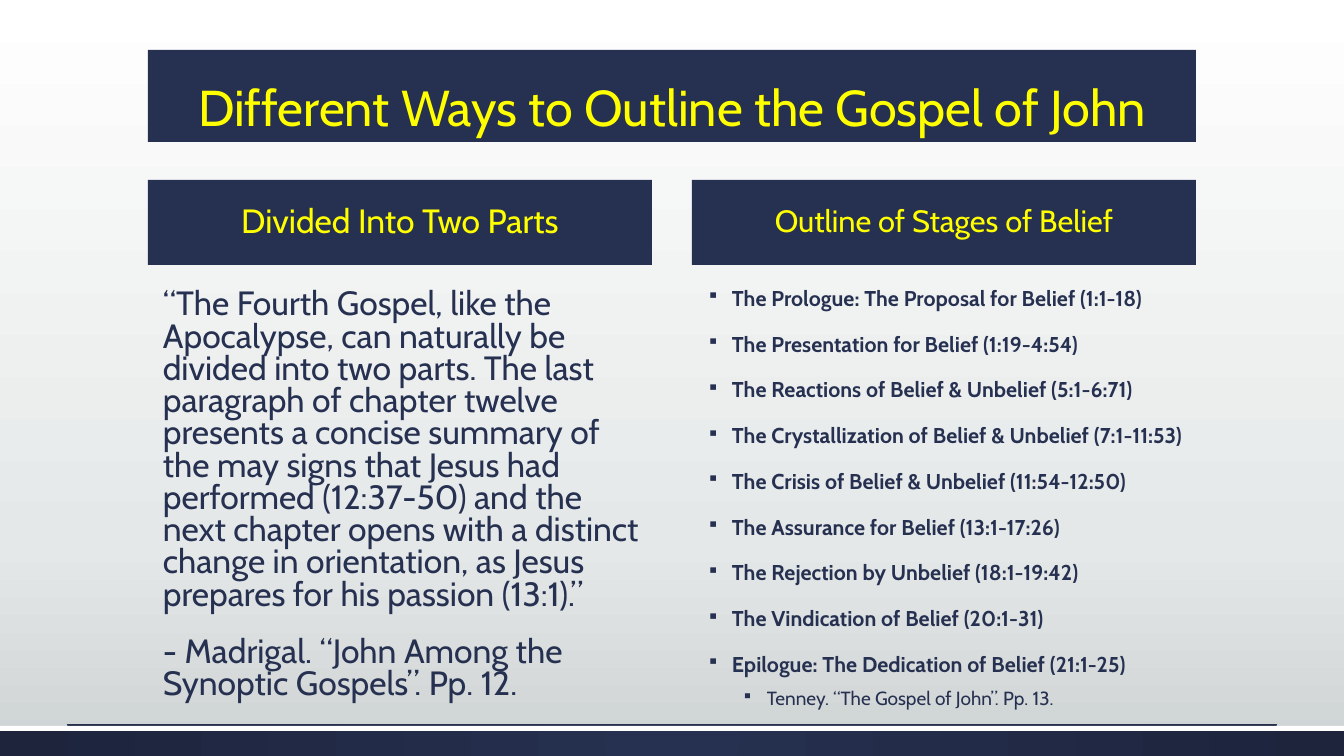
from lxml import etree
from pptx import Presentation
from pptx import util as u
from pptx.dml.color import RGBColor
from pptx.enum import shapes, text
from pptx.oxml.ns import qn

PX = 12192000 / 1344
COLORS = {"navy": "263050", "deep": "1D243C", "yellow": "FFFF00",
          "white": "FFFFFF", "pale": "E5E8E8", "gray": "CDD2D2"}
QUOTE = [
    "“The Fourth Gospel, like the Apocalypse, can naturally be divided into "
    "two parts. The last paragraph of chapter twelve presents a concise "
    "summary of the may signs that Jesus had performed (12:37-50) and the "
    "next chapter opens with a distinct change in orientation, as Jesus "
    "prepares for his passion (13:1).”",
    "- Madrigal. “John Among the Synoptic Gospels”. Pp. 12.",
]
STAGES = [
    "The Prologue: The Proposal for Belief (1:1-18)",
    "The Presentation for Belief (1:19-4:54)",
    "The Reactions of Belief & Unbelief (5:1-6:71)",
    "The Crystallization of Belief & Unbelief (7:1-11:53)",
    "The Crisis of Belief & Unbelief (11:54-12:50)",
    "The Assurance for Belief (13:1-17:26)",
    "The Rejection by Unbelief (18:1-19:42)",
    "The Vindication of Belief (20:1-31)",
    "Epilogue: The Dedication of Belief (21:1-25)",
]
CREDIT = "Tenney. “The Gospel of John”. Pp. 13."


def px(n):
    return u.Emu(round(n * PX))


def rgb(name):
    return RGBColor.from_string(COLORS[name])


def sub(node, tag, **attrs):
    return etree.SubElement(node, qn(tag), attrs)


def blend(root, stops, radial=False):
    """Refill the first gradient under root with (percent, color) stops."""
    grad = root.find(".//" + qn("a:gradFill"))
    for child in list(grad):
        grad.remove(child)
    row = sub(grad, "a:gsLst")
    for pos, name in stops:
        stop = sub(row, "a:gs", pos=str(pos * 1000))
        sub(stop, "a:srgbClr", val=COLORS[name])
    if radial:
        way = sub(grad, "a:path", path="circle")
        sub(way, "a:fillToRect", l="50000", t="50000", r="50000", b="50000")
    else:
        sub(grad, "a:lin", ang="5400000", scaled="0")


def block(slide, box, color="navy"):
    rect = slide.shapes.add_shape(shapes.MSO_SHAPE.RECTANGLE, *map(px, box))
    rect.shadow.inherit = False
    rect.fill.solid()
    rect.fill.fore_color.rgb = rgb(color)
    rect.line.fill.background()
    return rect


def style(para, size, color, bold=False):
    font = para.font
    font.name, font.size, font.bold = "Cabin", u.Pt(size), bold
    font.color.rgb = rgb(color)


def header(slide, box, words, size, anchor=text.MSO_ANCHOR.MIDDLE):
    frame = block(slide, box).text_frame
    frame.word_wrap = True
    frame.vertical_anchor = anchor
    para = frame.paragraphs[0]
    para.text = words
    para.alignment = text.PP_ALIGN.CENTER
    para.line_spacing = 0.9
    style(para, size, "yellow")


def body(slide, box, items):
    """Items are (words, size, bold, level, left px, hang px, space pt)."""
    frame = slide.shapes.add_textbox(*map(px, box)).text_frame
    frame.word_wrap = True
    for i, (words, size, bold, level, left, hang, space) in enumerate(items):
        para = frame.add_paragraph() if i else frame.paragraphs[0]
        para.text = words
        para.level = level
        para.line_spacing = 0.8
        para.space_before = u.Pt(space)
        props = para._p.get_or_add_pPr()
        props.set("marL", str(px(left)))
        props.set("indent", str(-px(hang)))
        if hang:
            tint = sub(props, "a:buClr")
            sub(tint, "a:srgbClr", val=COLORS["navy"])
            sub(props, "a:buSzPct", val="80000")
            sub(props, "a:buChar", char="▪")
        style(para, size, "navy", bold)


def column(slide, box, title, size, items):
    x, y, w, h = box
    header(slide, (x, y, w, 85), title, size)
    body(slide, (x, y + 105, w, h - 105), items)


def footer(slide, box):
    x, y, w, h = box
    bar = block(slide, box)
    bar.fill.gradient()
    blend(bar.element, [(0, "navy"), (100, "deep")], radial=True)
    block(slide, (x, y, w, 5), "white")
    rule = slide.shapes.add_connector(
        shapes.MSO_CONNECTOR.STRAIGHT,
        px(x + 67), px(y - 1), px(x + w - 67), px(y - 1))
    rule.line.color.rgb = rgb("navy")
    rule.line.width = u.Pt(0.75)
    sub(rule.element.spPr, "a:effectLst")


def main():
    deck = Presentation()
    deck.slide_width, deck.slide_height = px(1344), px(756)
    slide = deck.slides.add_slide(deck.slide_layouts[6])

    # Backdrop and footer
    slide.background.fill.gradient()
    blend(slide.element, [(0, "white"), (72, "pale"), (100, "gray")])
    footer(slide, (0, 726, 1344, 30))

    # Title
    header(slide, (148, 50, 1048, 92),
           "Different Ways to Outline the Gospel of John", 36,
           text.MSO_ANCHOR.BOTTOM)

    # Two columns
    quote = [(words, 24, False, 0, 5, 0, 18) for words in QUOTE]
    stages = [(words, 15.3, True, 0, 30, 25, 18) for words in STAGES]
    stages.append((CREDIT, 13.6, False, 1, 65, 25, 10))
    column(slide, (148, 180, 504, 533), "Divided Into Two Parts", 24, quote)
    column(slide, (692, 180, 504, 533), "Outline of Stages of Belief", 22,
           stages)

    deck.save("out.pptx")


if __name__ == "__main__":
    main()
